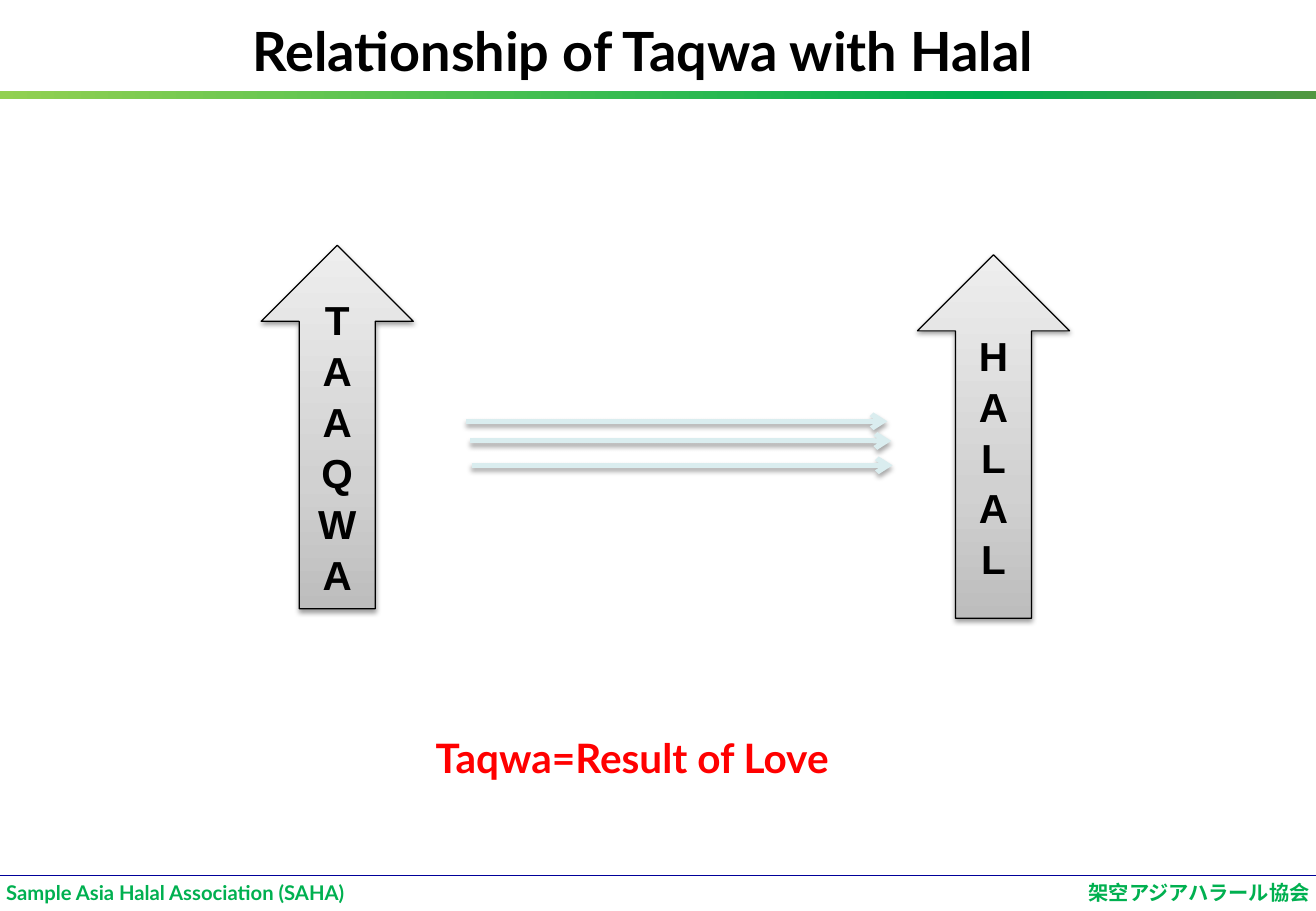
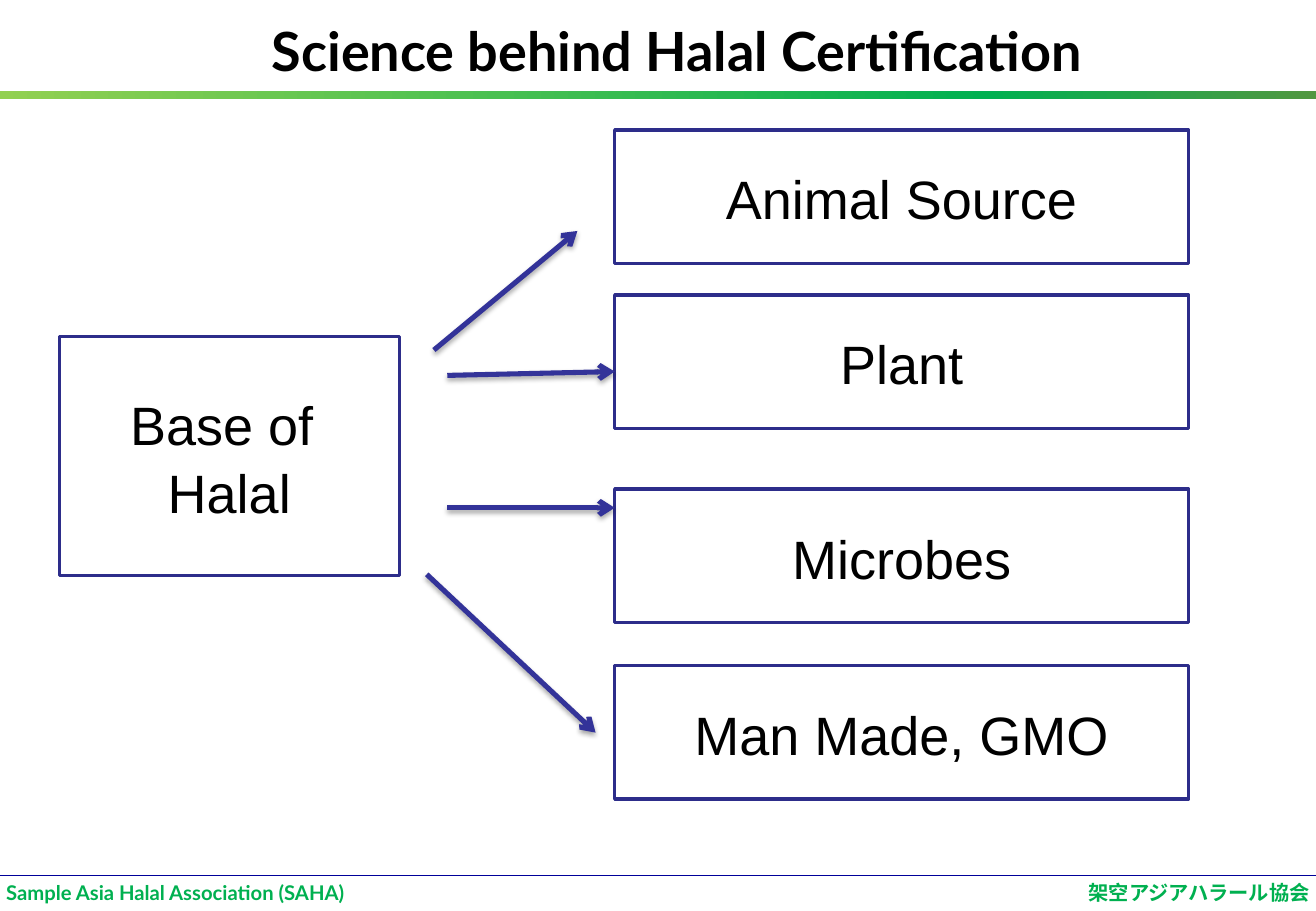
from lxml.etree import SubElement
from pptx import Presentation
from pptx.dml.color import RGBColor
from pptx.enum.shapes import MSO_CONNECTOR, MSO_SHAPE
from pptx.enum.text import MSO_ANCHOR, MSO_AUTO_SIZE, PP_ALIGN
from pptx.oxml.ns import qn
from pptx.util import Cm, Pt

COLORS = {
    "white": "FFFFFF", "black": "000000", "red": "FF0000",
    "green": "00B050", "lime": "92D050", "moss": "519741",
    "rule": "000099", "frame": "2D2D8A", "indigo": "333399", "ice": "DAEDEF",
    "gray": "BDBDBD", "silver": "D1D1D1", "pale": "EEEEEE",
}
WIDTH, HEIGHT = 27.51, 19.05
TITLE_FONT, BODY_FONT = "Lato", "Arial"
FOOTERS = (("Sample Asia Halal Association (SAHA)", PP_ALIGN.LEFT),
           ("架空アジアハラール協会", PP_ALIGN.RIGHT))


def rgb(name):
    return RGBColor.from_string(COLORS[name])


def put_text(tf, text, size=32, font=BODY_FONT, color="black", bold=False,
             align=PP_ALIGN.CENTER, anchor=MSO_ANCHOR.MIDDLE, spacing=None,
             margin=None):
    tf.word_wrap = True
    tf.auto_size = MSO_AUTO_SIZE.NONE
    tf.vertical_anchor = anchor
    if margin is not None:
        tf.margin_left = tf.margin_right = Cm(margin)
        tf.margin_top = tf.margin_bottom = Cm(margin)
    for i, line in enumerate(text.split("\n")):
        p = tf.add_paragraph() if i else tf.paragraphs[0]
        p.alignment = align
        p.line_spacing = spacing
        r = p.add_run()
        r.text = line
        r.font.name = font
        r.font.size = Pt(size)
        r.font.bold = bold
        r.font.color.rgb = rgb(color)


def add_text(slide, box, text, **fmt):
    sp = slide.shapes.add_textbox(*map(Cm, box))
    put_text(sp.text_frame, text, **fmt)


def add_box(slide, kind, box, line=None, width=1):
    sp = slide.shapes.add_shape(kind, *map(Cm, box))
    sp.shadow.inherit = False
    if line:
        sp.line.color.rgb = rgb(line)
        sp.line.width = Pt(width)
    else:
        sp.line.fill.background()
    return sp


def set_gradient(sp, stops, angle):
    sp.fill.gradient()
    sp.fill.gradient_angle = angle
    gs_list = sp._element.spPr.find(qn("a:gradFill")).find(qn("a:gsLst"))
    for gs in list(gs_list):
        gs_list.remove(gs)
    for pos, name in stops:
        gs = SubElement(gs_list, qn("a:gs"), pos=str(pos * 1000))
        SubElement(gs, qn("a:srgbClr"), val=COLORS[name])


def set_shadow(sp, alpha, dist):
    spPr = sp._element.spPr
    effects = spPr.find(qn("a:effectLst"))
    if effects is None:
        effects = SubElement(spPr, qn("a:effectLst"))
    shadow = SubElement(effects, qn("a:outerShdw"), blurRad=str(Pt(3.1)),
                        dist=str(Pt(dist)), dir="5400000", rotWithShape="0")
    clr = SubElement(shadow, qn("a:srgbClr"), val=COLORS["black"])
    SubElement(clr, qn("a:alpha"), val=str(alpha * 1000))


def add_line(slide, start, end, color, width):
    cx = slide.shapes.add_connector(MSO_CONNECTOR.STRAIGHT,
                                    *map(Cm, (*start, *end)))
    cx.line.color.rgb = rgb(color)
    cx.line.width = Pt(width)
    SubElement(cx._element.spPr, qn("a:effectLst"))
    return cx


def add_arrow(slide, start, end, color):
    cx = add_line(slide, start, end, color, 3)
    SubElement(cx.line._get_or_add_ln(), qn("a:tailEnd"), type="arrow")
    set_shadow(cx, 35, 1.8)


def add_frame(slide):
    band = add_box(slide, MSO_SHAPE.RECTANGLE, (0, 1.9, WIDTH, 0.17))
    set_gradient(band, [(0, "lime"), (75, "green"), (100, "moss")], 0)
    add_line(slide, (0, 18.31), (WIDTH, 18.31), "rule", 1)
    margin, width = 0.13, 12.22
    for (text, align), left in zip(FOOTERS, (margin, WIDTH - margin - width)):
        add_text(slide, (left, 18.41, width, 0.51), text, size=12, bold=True,
                 font=TITLE_FONT, color="green", align=align, margin=0)


def new_slide(prs, title, left, width):
    slide = prs.slides.add_slide(prs.slide_layouts[5])
    add_frame(slide)
    sp = slide.shapes.title
    sp.left, sp.top, sp.width, sp.height = map(Cm, (left, 0.23, width, 1.63))
    put_text(sp.text_frame, title, font=TITLE_FONT, bold=True)
    return slide


def add_pillar(slide, left, top, word):
    sp = add_box(slide, MSO_SHAPE.UP_ARROW, (left, top, 3.18, 7.6),
                 "black", 0.75)
    set_gradient(sp, [(0, "gray"), (35, "silver"), (100, "pale")], 90)
    set_shadow(sp, 38, 1.6)
    put_text(sp.text_frame, "\n".join(word), size=24, bold=True, spacing=1.05)


def add_card(slide, box, text):
    sp = add_box(slide, MSO_SHAPE.RECTANGLE, box, "frame", 2)
    sp.fill.solid()
    sp.fill.fore_color.rgb = rgb("white")
    put_text(sp.text_frame, text, spacing=1.05)


def relationship_slide(prs):
    slide = new_slide(prs, "Relationship of Taqwa with Halal", 3.45, 20)
    add_pillar(slide, 19.18, 5.33, "HALAL")
    add_pillar(slide, 5.46, 5.13, "TAAQWA")
    for x, y in ((9.75, 8.81), (9.83, 9.22), (9.86, 9.73)):
        add_arrow(slide, (x, y), (x + 8.8, y), "ice")
    add_text(slide, (8.86, 15.21, 11.61, 1.27), "Taqwa=Result of Love",
             size=24, font=TITLE_FONT, color="red", bold=True,
             align=PP_ALIGN.LEFT, anchor=MSO_ANCHOR.TOP)


def science_slide(prs):
    slide = new_slide(prs, "Science behind Halal Certification", 3.86, 20.6)
    add_card(slide, (1.24, 7.04, 7.11, 5), "Base of \nHalal")
    left = 12.85
    sources = (
        ("Animal Source", 2.72, (9.07, 7.32), (12.07, 4.83)),
        ("Plant", 6.17, (9.35, 7.85), (left, 7.77)),
        ("Microbes", 10.23, (9.35, 10.62), (left, 10.62)),
        ("Man Made, GMO", 13.92, (8.92, 12.01), (12.45, 15.32)),
    )
    for text, top, start, end in sources:
        add_card(slide, (left, top, 12, 2.79), text)
        add_arrow(slide, start, end, "indigo")


def main():
    prs = Presentation()
    prs.slide_width, prs.slide_height = Cm(WIDTH), Cm(HEIGHT)
    relationship_slide(prs)
    science_slide(prs)
    prs.save("out.pptx")


if __name__ == "__main__":
    main()
